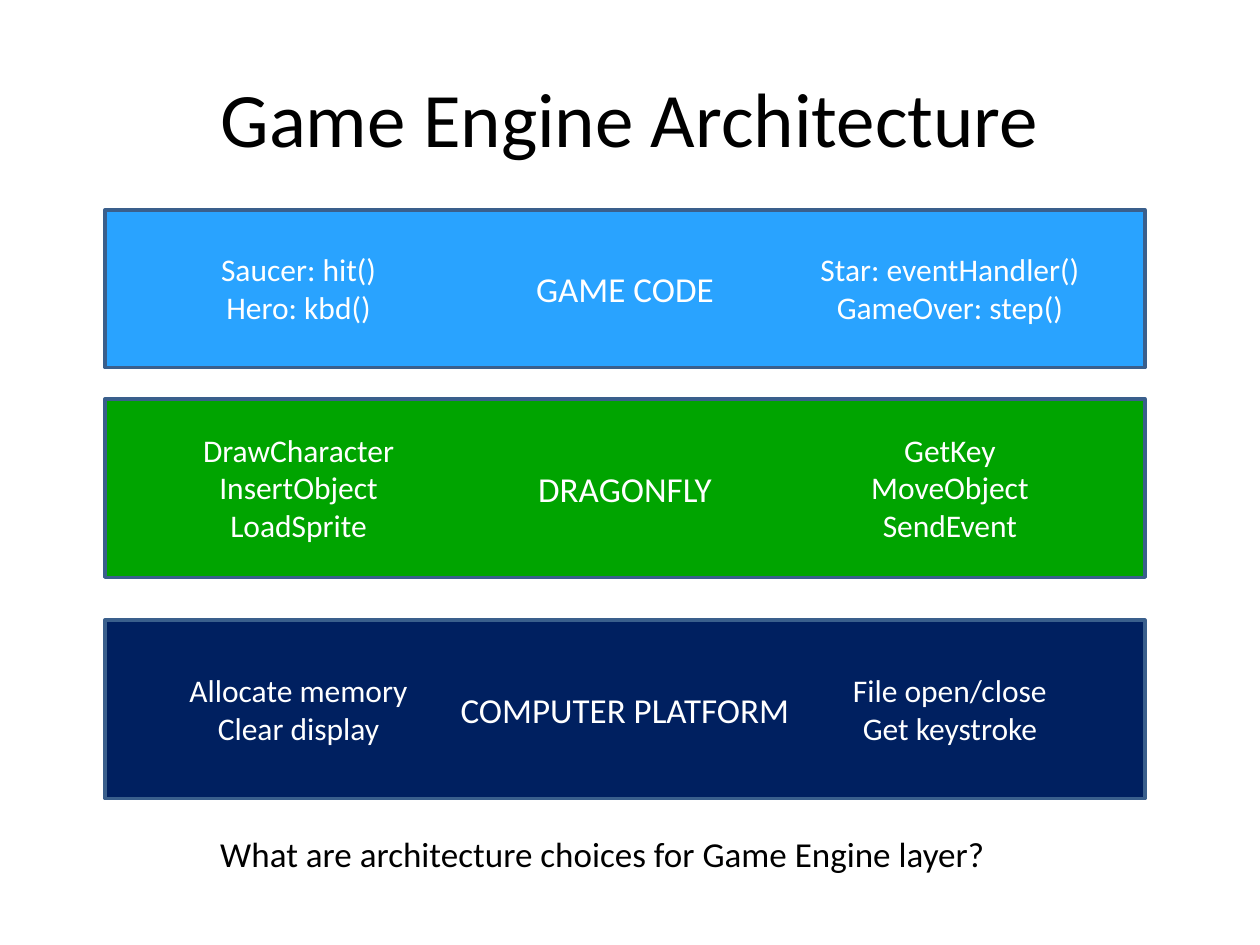
"""Build the Game Engine Architecture slide with its three stacked layers."""
import pptx
import pptx.dml.color
import pptx.enum.shapes
import pptx.enum.text
import pptx.util

Cm = pptx.util.Cm
ALIGN = pptx.enum.text.PP_ALIGN
ANCHOR = pptx.enum.text.MSO_ANCHOR
AUTO_SIZE = pptx.enum.text.MSO_AUTO_SIZE

HEADING = "Game Engine Architecture"
QUESTION = "What are architecture choices for Game Engine layer?"
LAYERS = [
    {"label": "GAME CODE", "fill": "29A3FF", "top": 4.23, "height": 3.18,
     "examples": [(["Saucer: hit()", "Hero: kbd()"], 3.68),
                  (["Star: eventHandler()", "GameOver: step()"], 5.79)]},
    {"label": "DRAGONFLY", "fill": "00A400", "top": 8.04, "height": 3.6,
     "examples": [(["DrawCharacter", "InsertObject", "LoadSprite"], 4.42),
                  (["GetKey", "MoveObject", "SendEvent"], 3.71)]},
    {"label": "COMPUTER PLATFORM", "fill": "002060", "top": 12.5, "height": 3.6,
     "examples": [(["Allocate memory", "Clear display"], 4.95),
                  (["File open/close", "Get keystroke"], 4.47)]},
]

THEME = {"font": "Calibri", "dark": "000000", "light": "FFFFFF", "border": "3A5F8C",
         "heading": 44, "label": 20, "example": 18}
LAYER_LEFT, LAYER_WIDTH = 2.12, 20.96
EXAMPLE_CENTRES = (6.02, 19.15)
LINE_HEIGHT, BOX_PADDING = 0.77, 0.26


def rgb(value):
    return pptx.dml.color.RGBColor.from_string(value)


def write(frame, lines, size, colour, align=ALIGN.CENTER):
    for index, line in enumerate(lines):
        paragraph = frame.add_paragraph() if index else frame.paragraphs[0]
        paragraph.text = line
        paragraph.alignment = align
        paragraph.font.name = THEME["font"]
        paragraph.font.size = pptx.util.Pt(THEME[size])
        paragraph.font.color.rgb = rgb(THEME[colour])


def add_fitted_text(shapes, lines, left, top, width, height, *style):
    frame = shapes.add_textbox(Cm(left), Cm(top), Cm(width), Cm(height)).text_frame
    frame.word_wrap = False
    frame.auto_size = AUTO_SIZE.SHAPE_TO_FIT_TEXT
    write(frame, lines, *style)


def add_layer(slide, layer):
    shapes = slide.shapes.add_group_shape().shapes
    band = shapes.add_shape(
        pptx.enum.shapes.MSO_SHAPE.RECTANGLE,
        Cm(LAYER_LEFT), Cm(layer["top"]), Cm(LAYER_WIDTH), Cm(layer["height"]))
    band.shadow.inherit = False
    band.fill.solid()
    band.fill.fore_color.rgb = rgb(layer["fill"])
    band.line.color.rgb = rgb(THEME["border"])
    band.line.width = pptx.util.Pt(2)
    band.text_frame.vertical_anchor = ANCHOR.MIDDLE
    write(band.text_frame, [layer["label"]], "label", "light")

    middle = layer["top"] + layer["height"] / 2
    for centre, (lines, width) in zip(EXAMPLE_CENTRES, layer["examples"]):
        height = len(lines) * LINE_HEIGHT + BOX_PADDING
        add_fitted_text(shapes, lines, centre - width / 2, middle - height / 2,
                        width, height, "example", "light")


def main():
    deck = pptx.Presentation()
    deck.slide_width, deck.slide_height = Cm(25.4), Cm(19.05)
    slide = deck.slides.add_slide(deck.slide_layouts[6])

    heading = slide.shapes.add_textbox(Cm(1.27), Cm(0.76), Cm(22.86), Cm(3.18)).text_frame
    heading.word_wrap = True
    heading.vertical_anchor = ANCHOR.MIDDLE
    write(heading, [HEADING], "heading", "dark")

    for layer in LAYERS:
        add_layer(slide, layer)

    add_fitted_text(slide.shapes, [QUESTION], 4.19, 16.66, 16.08, 1.11,
                    "label", "dark", ALIGN.LEFT)
    deck.save("out.pptx")


if __name__ == "__main__":
    main()
